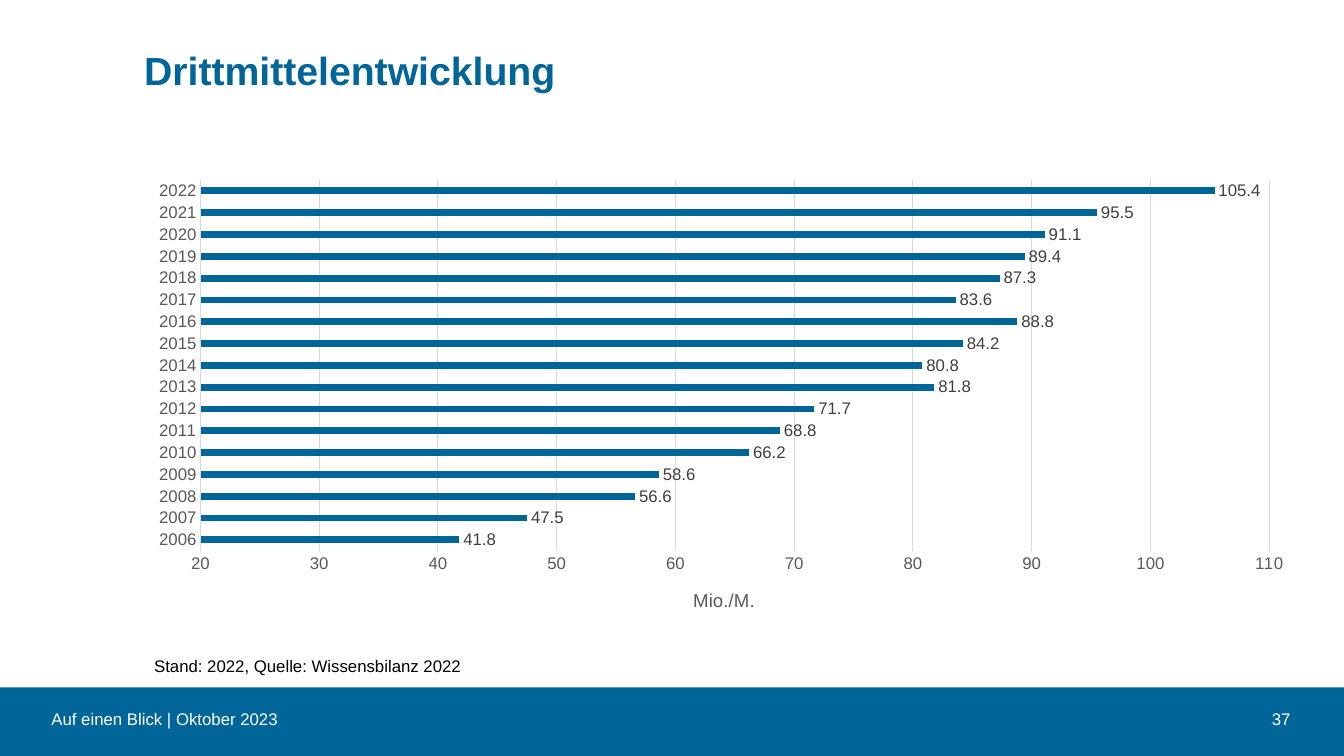
from dataclasses import dataclass

import pptx
import pptx.chart.data
import pptx.dml.color
import pptx.enum.chart
import pptx.enum.shapes
import pptx.enum.text
import pptx.oxml
import pptx.oxml.ns
import pptx.util
from pptx.util import Inches


@dataclass(frozen=True)
class Theme:
    font: str = "Arial"
    blue: str = "006699"
    white: str = "FFFFFF"
    black: str = "000000"
    axis_text: str = "595959"
    label_text: str = "404040"
    grid: str = "D9D9D9"
    title_size: float = 28
    axis_title_size: float = 13.3
    text_size: float = 12


THEME = Theme()
FIRST_YEAR = 2006
FUNDING = [41.8, 47.5, 56.6, 58.6, 66.2, 68.8, 71.7, 81.8, 80.8,
           84.2, 88.8, 83.6, 87.3, 89.4, 91.1, 95.5, 105.4]


def rgb(value):
    return pptx.dml.color.RGBColor.from_string(value)


def format_font(font, size, color, bold=False):
    font.name = THEME.font
    font.size = pptx.util.Pt(size)
    font.bold = bold
    font.color.rgb = rgb(color)


def write_text(frame, text, size=THEME.text_size, color=THEME.black, bold=False,
               align=pptx.enum.text.PP_ALIGN.LEFT,
               anchor=pptx.enum.text.MSO_ANCHOR.TOP, inset=True, spacing=None):
    frame.word_wrap = True
    frame.auto_size = pptx.enum.text.MSO_AUTO_SIZE.NONE
    frame.vertical_anchor = anchor
    if not inset:
        frame.margin_left = frame.margin_right = 0
        frame.margin_top = frame.margin_bottom = 0
    paragraph = frame.paragraphs[0]
    paragraph.alignment = align
    paragraph.line_spacing = spacing
    run = paragraph.add_run()
    run.text = text
    format_font(run.font, size, color, bold)


def add_text(slide, left, top, width, height, text, **text_format):
    box = slide.shapes.add_textbox(Inches(left), Inches(top), Inches(width), Inches(height))
    write_text(box.text_frame, text, **text_format)


def add_title(slide, text):
    title = slide.shapes.title
    title.left, title.top = Inches(1.43), Inches(0.51)
    title.width, title.height = Inches(10.16), Inches(0.91)
    write_text(title.text_frame, text, size=THEME.title_size, color=THEME.blue,
               bold=True, inset=False, spacing=0.9)


def add_footer(slide, text, number):
    band = slide.shapes.add_shape(pptx.enum.shapes.MSO_SHAPE.RECTANGLE,
                                  0, Inches(6.82), Inches(13.33), Inches(0.68))
    band.shadow.inherit = False
    band.fill.solid()
    band.fill.fore_color.rgb = rgb(THEME.blue)
    band.line.fill.background()
    footer_format = dict(color=THEME.white, inset=False,
                         anchor=pptx.enum.text.MSO_ANCHOR.MIDDLE)
    add_text(slide, 0.51, 6.98, 11.08, 0.31, text, **footer_format)
    add_text(slide, 11.9, 6.98, 0.9, 0.31, number,
             align=pptx.enum.text.PP_ALIGN.RIGHT, **footer_format)


def place_in_chart(element, index, **settings):
    """Give a chart element a manual layout, as its child at index."""
    for old_layout in element.findall(pptx.oxml.ns.qn("c:layout")):
        element.remove(old_layout)
    values = "".join(f'<c:{name} val="{value}"/>' for name, value in settings.items())
    element.insert(index, pptx.oxml.parse_xml(
        f'<c:layout {pptx.oxml.ns.nsdecls("c")}>'
        f'<c:manualLayout>{values}</c:manualLayout></c:layout>'))


def format_axis(axis):
    axis.major_tick_mark = axis.minor_tick_mark = pptx.enum.chart.XL_TICK_MARK.NONE
    format_font(axis.tick_labels.font, THEME.text_size, THEME.axis_text)


def format_line(line):
    line.color.rgb = rgb(THEME.grid)
    line.width = pptx.util.Pt(0.75)


def add_funding_chart(slide):
    data = pptx.chart.data.CategoryChartData(number_format="0.0")
    data.categories = [str(FIRST_YEAR + i) for i in range(len(FUNDING))]
    data.add_series("Series 1", FUNDING)
    chart = slide.shapes.add_chart(
        pptx.enum.chart.XL_CHART_TYPE.BAR_CLUSTERED,
        Inches(1.35), Inches(1.69), Inches(11.61), Inches(4.57), data).chart
    format_font(chart.font, 10, THEME.black)
    chart.has_legend = False
    chart.has_title = False

    years, amounts = chart.category_axis, chart.value_axis
    format_axis(years)
    format_line(years.format.line)
    years.has_major_gridlines = False
    format_axis(amounts)
    amounts.format.line.fill.background()
    amounts.minimum_scale, amounts.maximum_scale, amounts.major_unit = 20, 110, 10
    amounts.tick_labels.number_format = "0"
    amounts.tick_labels.number_format_is_linked = False
    amounts.has_major_gridlines = True
    format_line(amounts.major_gridlines.format.line)
    run = amounts.axis_title.text_frame.paragraphs[0].add_run()
    run.text = "Mio./M."
    format_font(run.font, THEME.axis_title_size, THEME.axis_text)

    plot = chart.plots[0]
    plot.gap_width = 219
    plot.vary_by_categories = False
    fill = plot.series[0].format.fill
    fill.solid()
    fill.fore_color.rgb = rgb(THEME.blue)
    plot.has_data_labels = True
    labels = plot.data_labels
    labels.show_value = True
    labels.position = pptx.enum.chart.XL_LABEL_POSITION.OUTSIDE_END
    format_font(labels.font, THEME.text_size, THEME.label_text)

    plot_area = chart.element.find(".//" + pptx.oxml.ns.qn("c:plotArea"))
    place_in_chart(plot_area, 0, layoutTarget="inner", xMode="edge", yMode="edge",
                   x=0.055, y=0.021, w=0.913, h=0.805)
    axis_title = plot_area.find(".//" + pptx.oxml.ns.qn("c:title"))
    place_in_chart(axis_title, 1, xMode="edge", yMode="edge", x=0.473, y=0.9)


def main():
    presentation = pptx.Presentation()
    presentation.slide_width, presentation.slide_height = Inches(13.33), Inches(7.5)
    slide = presentation.slides.add_slide(presentation.slide_layouts.get_by_name("Title Only"))
    add_footer(slide, "Auf einen Blick | Oktober 2023", "37")
    add_title(slide, "Drittmittelentwicklung")
    add_funding_chart(slide)
    add_text(slide, 1.43, 6.46, 5.59, 0.61, "Stand: 2022, Quelle: Wissensbilanz 2022")
    presentation.save("out.pptx")


if __name__ == "__main__":
    main()
